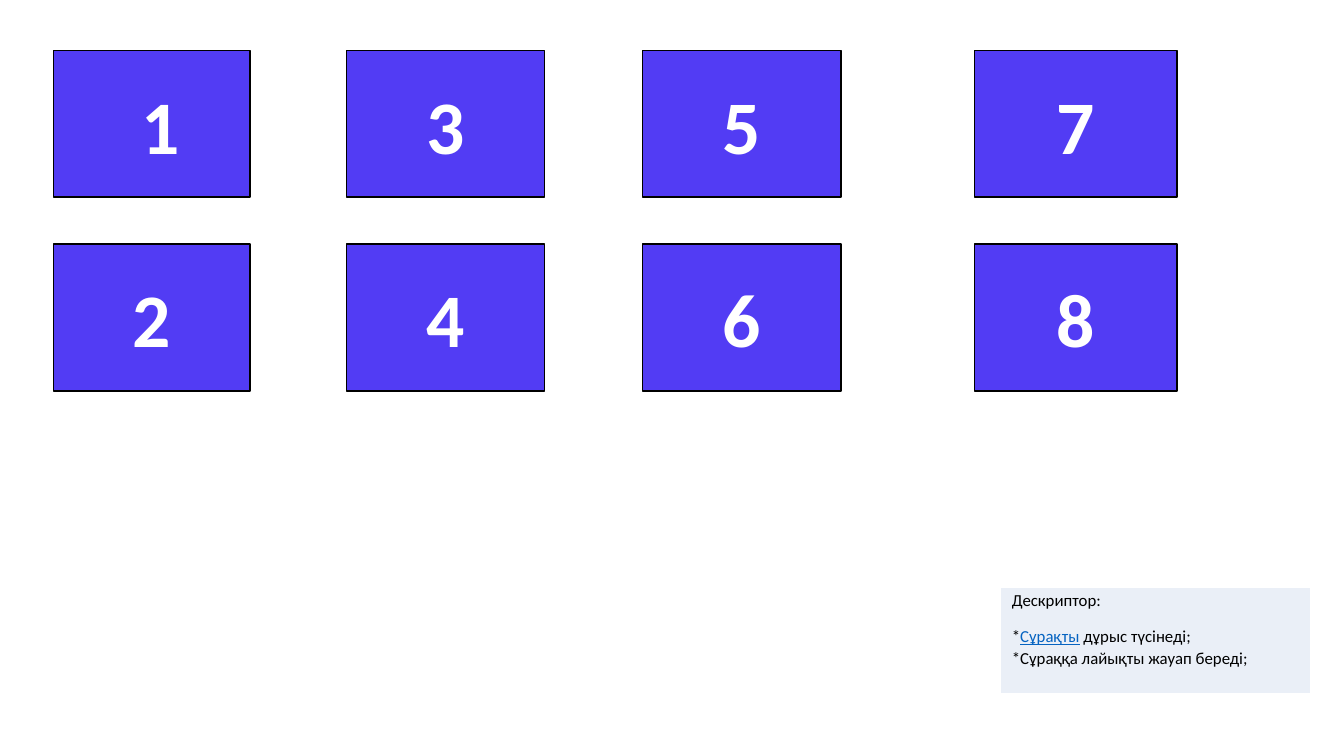
from lxml import etree
from pptx import Presentation
from pptx import util as u
from pptx.dml.color import RGBColor
from pptx.enum import shapes, text
from pptx.oxml import ns


def color(value):
    return RGBColor.from_string(value)


def add_run(p, content, size, fill, bold=False, underline=False):
    r = p.add_run()
    r.text = content
    r.font.name = "Calibri"
    r.font.size = u.Pt(size)
    r.font.bold = bold
    r.font.underline = underline
    r.font.color.rgb = color(fill)


prs = Presentation()
prs.slide_width = u.Cm(33.87)
prs.slide_height = u.Cm(19.05)
s = prs.slides.add_slide(prs.slide_layouts[6])

columns = [(1.35, 4.95), (8.74, 4.98), (16.2, 5), (24.56, 5.1)]
rows = [1.27, 6.15]
labels = iter([" 1", "2", "3", "4", "5", "6", "7", "8"])

for left, width in columns:
    for top in rows:
        sp = s.shapes.add_shape(
            shapes.MSO_SHAPE.RECTANGLE, u.Cm(left), u.Cm(top), u.Cm(width), u.Cm(3.7)
        )
        sp.shadow.inherit = False
        sp.fill.solid()
        sp.fill.fore_color.rgb = color("523CF4")
        sp.line.color.rgb = color("000000")
        sp.line.width = u.Pt(1)
        tf = sp.text_frame
        tf.vertical_anchor = text.MSO_ANCHOR.MIDDLE
        p = tf.paragraphs[0]
        p.alignment = text.PP_ALIGN.CENTER
        add_run(p, next(labels), 54, "FFFFFF", bold=True)

table = s.shapes.add_table(1, 1, u.Cm(25.2), u.Cm(14.81), u.Cm(7.82), u.Cm(2.67)).table
table.first_row = False
table.horz_banding = False
cell = table.cell(0, 0)
cell.fill.solid()
cell.fill.fore_color.rgb = color("EAEFF7")
cell.margin_left = cell.margin_right = u.Cm(0.3)
cell.margin_top = cell.margin_bottom = 0

tcPr = cell._tc.get_or_add_tcPr()
for i, side in enumerate(["lnL", "lnR", "lnT", "lnB"]):
    ln = etree.Element(ns.qn(f"a:{side}"), w=str(u.Pt(1)))
    fill = etree.SubElement(ln, ns.qn("a:solidFill"))
    etree.SubElement(fill, ns.qn("a:srgbClr"), val="FFFFFF")
    tcPr.insert(i, ln)

descriptor = [
    (1.15, 10, [("Дескриптор:", "000000", False)]),
    (1.07, 0, [
        ("*", "000000", False),
        ("Сұрақты", "0563C1", True),
        (" дұрыс түсінеді;", "000000", False),
    ]),
    (1.07, 0, [("*Сұраққа лайықты жауап береді;", "000000", False)]),
]
tf = cell.text_frame
for i, (spacing, after, runs) in enumerate(descriptor):
    p = tf.add_paragraph() if i else tf.paragraphs[0]
    p.line_spacing = spacing
    p.space_after = u.Pt(after)
    for content, fill, underline in runs:
        add_run(p, content, 12, fill, underline=underline)

prs.save("out.pptx")
